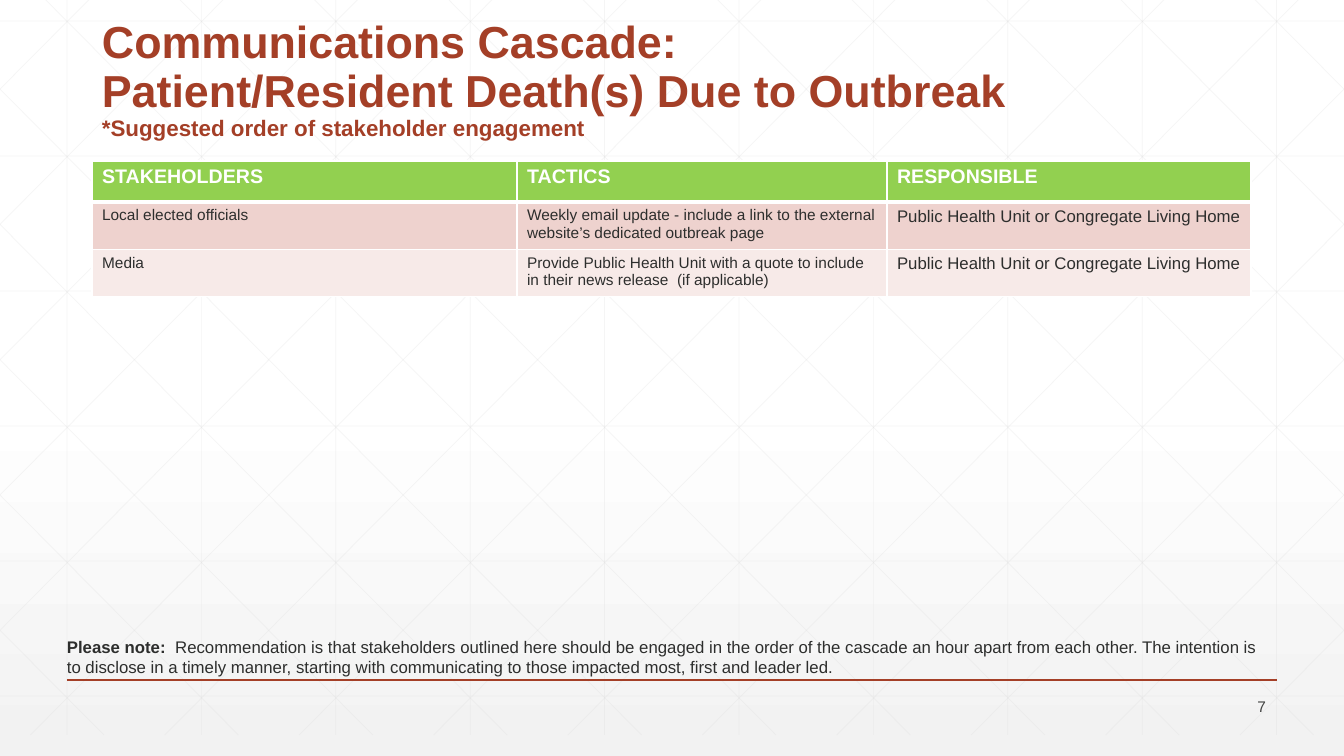
"""Builds the communications cascade slide for deaths due to an outbreak."""
from lxml.etree import SubElement
from pptx import Presentation
from pptx.dml.color import RGBColor as Rgb
from pptx.enum.shapes import MSO_CONNECTOR as Connector
from pptx.enum.text import MSO_ANCHOR as Anchor, PP_ALIGN as Align
from pptx.oxml import parse_xml
from pptx.oxml.ns import nsdecls, qn
from pptx.util import Pt

PX = 914400 / 100.8
WIDTH, HEIGHT = 1344, 756
COLORS = {
    "white": "FFFFFF", "fade": "F2F2F2", "lattice": "D9D9D9", "rust": "A43F27",
    "header": "92D050", "band": "EED2CE", "pale": "F7EAE8",
    "ink": "2D2E2D", "number": "424342",
}


def add_line(shapes, start, end, color, weight):
    ends = [round(v * PX) for v in (*start, *end)]
    line = shapes.add_connector(Connector.STRAIGHT, *ends)
    line.line.color.rgb = Rgb.from_string(COLORS[color])
    line.line.width = Pt(weight)
    SubElement(line._element.spPr, qn("a:effectLst"))
    return line


def style(paragraph, size, color, bold=None):
    font = paragraph.font
    font.name, font.size, font.bold = "Arial", Pt(size), bold
    font.color.rgb = Rgb.from_string(COLORS[color])


deck = Presentation()
deck.slide_width, deck.slide_height = round(WIDTH * PX), round(HEIGHT * PX)
slide = deck.slides.add_slide(deck.slide_layouts[6])
shapes = slide.shapes

backdrop = slide.background.fill
backdrop.gradient()
backdrop.gradient_angle = 270
for stop, position, color in zip(backdrop.gradient_stops, (0.53, 1), ("white", "fade")):
    stop.position = position
    stop.color.rgb = Rgb.from_string(COLORS[color])

TOP, BOTTOM, STEP, RUN = -21, 735, WIDTH / 10, 751
slope = (BOTTOM - TOP) / RUN
segments = [((67 + STEP * i, TOP), (67 + STEP * i, BOTTOM)) for i in range(10)]
segments += [((0, 21 + 135 * i), (WIDTH, 21 + 135 * i)) for i in range(6)]
for i in range(-5, 10):
    origin = 25 + STEP * i
    left, right = max(origin, 0), min(origin + RUN, WIDTH)
    upper, lower = (TOP + (x - origin) * slope for x in (left, right))
    segments.append(((left, upper), (right, lower)))
    segments.append(((WIDTH - left, upper), (WIDTH - right, lower)))
lattice = shapes.add_group_shape().shapes
for start, end in segments:
    thread = add_line(lattice, start, end, "lattice", 0.5)
    tint = thread._element.spPr.find(".//" + qn("a:srgbClr"))
    SubElement(tint, qn("a:alpha"), val="25000")

add_line(shapes, (67, 680), (1277, 680), "rust", 1)

frames = []
for box in ((92, 0, 1159, 146), (1175, 694, 101, 24), (57, 632, 1220, 50)):
    frame = shapes.add_textbox(*(round(v * PX) for v in box)).text_frame
    frame.word_wrap = True
    frames.append(frame)
title, page, note = frames

title.vertical_anchor = Anchor.BOTTOM
heading = title.paragraphs[0]
heading.text = "Communications Cascade: \vPatient/Resident Death(s) Due to Outbreak\v"
heading.line_spacing = 0.9
style(heading, 32, "rust", True)
subtitle = heading.add_run()
subtitle.text = "*Suggested order of stakeholder engagement"
subtitle.font.size = Pt(16)

page.vertical_anchor = Anchor.MIDDLE
page.text = "7"
page.paragraphs[0].alignment = Align.RIGHT
style(page.paragraphs[0], 11, "number")

advice = note.paragraphs[0]
style(advice, 12, "ink")
label = advice.add_run()
label.text = "Please note:  "
label.font.bold = True
advice.add_run().text = (
    "Recommendation is that stakeholders outlined here should be engaged in the order "
    "of the cascade an hour apart from each other. The intention is to disclose in a "
    "timely manner, starting with communicating to those impacted most, first and leader led."
)

OWNER = "Public Health Unit or Congregate Living Home"
ROWS = [
    (41, "header", ("STAKEHOLDERS", "TACTICS", "RESPONSIBLE")),
    (47, "band", (
        "Local elected officials",
        "Weekly email update - include a link to the external website’s dedicated outbreak page",
        OWNER)),
    (47, "pale", (
        "Media",
        "Provide Public Health Unit with a quote to include in their news release  (if applicable)",
        OWNER)),
]
COLUMNS = (425, 370, 364)
cascade = shapes.add_table(
    len(ROWS), len(COLUMNS),
    *(round(v * PX) for v in (92, 161, sum(COLUMNS), sum(row[0] for row in ROWS)))
).table
for column, width in zip(cascade.columns, COLUMNS):
    column.width = round(width * PX)
for r, (height, fill, texts) in enumerate(ROWS):
    cascade.rows[r].height = round(height * PX)
    for c, text in enumerate(texts):
        cell = cascade.cell(r, c)
        cell.text = text
        if r == 0:
            style(cell.text_frame.paragraphs[0], 14, "white", True)
        else:
            style(cell.text_frame.paragraphs[0], 12 if c == 2 else 11, "ink", False)
        for side in "LRTB":
            thick = (r, side) in ((0, "B"), (1, "T"))
            cell._tc.get_or_add_tcPr().append(parse_xml(
                f'<a:ln{side} {nsdecls("a")} w="{Pt(3 if thick else 1)}"><a:solidFill>'
                f'<a:srgbClr val="{COLORS["white"]}"/></a:solidFill></a:ln{side}>'))
        cell.fill.solid()
        cell.fill.fore_color.rgb = Rgb.from_string(COLORS[fill])

deck.save("out.pptx")
